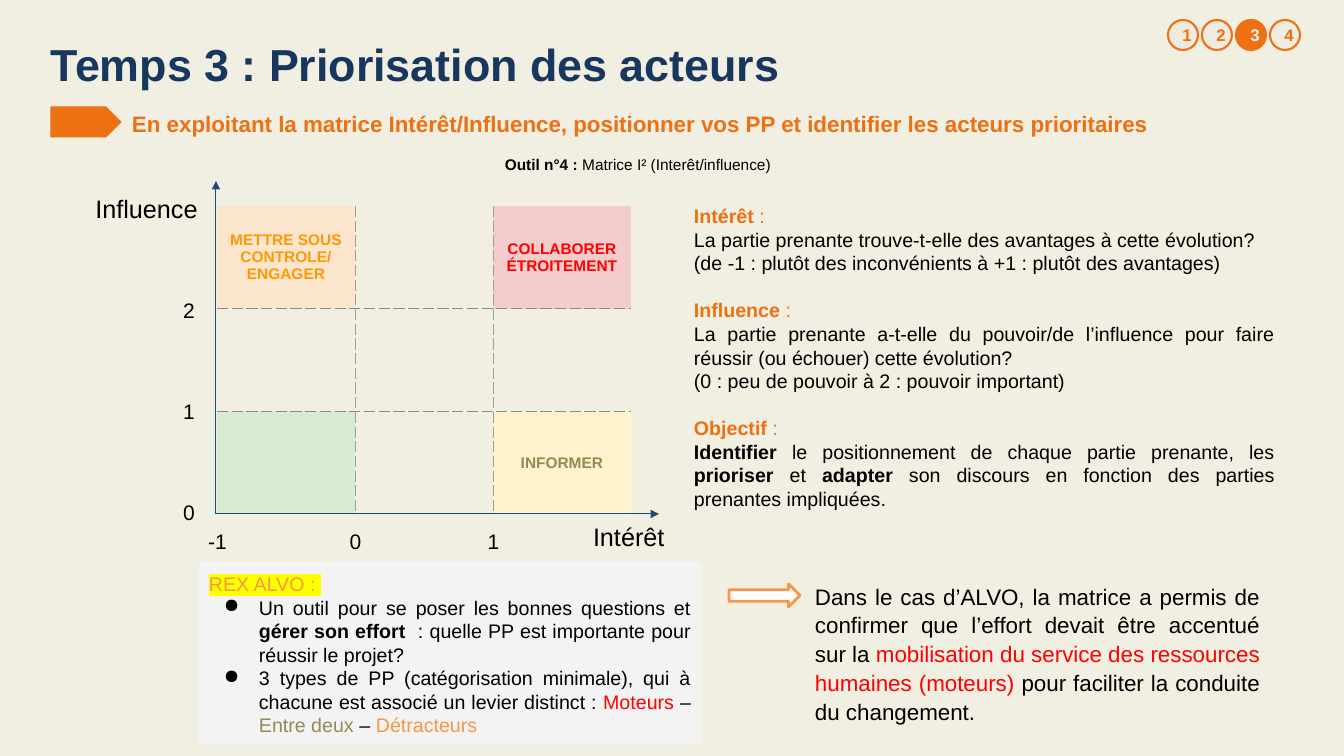
import pptx
import pptx.util
import pptx.dml.color
import pptx.enum.shapes
import pptx.enum.text
import pptx.oxml
import pptx.oxml.ns
from dataclasses import dataclass
from lxml import etree

SHAPE = pptx.enum.shapes.MSO_SHAPE
ALIGN = pptx.enum.text.PP_ALIGN
TOP = pptx.enum.text.MSO_ANCHOR.TOP
MID = pptx.enum.text.MSO_ANCHOR.MIDDLE
PLAIN = "{2D5ABB26-0587-4C30-8999-92F81FD0307C}"


@dataclass(frozen=True)
class Theme:
    font: str = "Arial"
    back: str = "F1EFE1"
    navy: str = "17375E"
    blue: str = "1F497D"
    orange: str = "ED7012"
    peach: str = "F79646"
    amber: str = "FF9900"
    red: str = "FF0000"
    olive: str = "948A54"
    black: str = "000000"
    white: str = "FFFFFF"
    pale: str = "F4F4F4"
    cream: str = "EEECE1"
    panel: str = "F3F3F3"
    yellow: str = "FFFF00"
    title: int = 32
    axis: int = 18
    lead: int = 16
    tick: int = 15
    body: int = 14
    badge: int = 12
    small: int = 11


def px(n):
    return pptx.util.Emu(round(n * 914400 / 100.8))


def rgb(code):
    return pptx.dml.color.RGBColor.from_string(code)


def put(obj, values):
    for name, value in values.items():
        setattr(obj, name, value)


def node(parent, tag, **attrs):
    return etree.SubElement(parent, pptx.oxml.ns.qn(tag), attrs)


class Deck:
    def __init__(self, theme):
        self.theme = theme
        self.show = pptx.Presentation()
        put(self.show, {"slide_width": px(1344), "slide_height": px(756)})
        self.slide = self.show.slides.add_slide(self.show.slide_layouts[5])
        fill = self.slide.background.fill
        fill.solid()
        fill.fore_color.rgb = rgb(theme.back)

    def words(self, frame, paras, size, align=ALIGN.LEFT, anchor=TOP, pad=(10, 10)):
        """Fill a frame; each paragraph is (runs, format values), each run is
        (text, colour, bold, highlight) with the last two optional."""
        x, y = map(px, pad)
        put(frame, {"word_wrap": True, "vertical_anchor": anchor, "margin_left": x,
                    "margin_right": x, "margin_top": y, "margin_bottom": y})
        for i, (runs, form) in enumerate(paras):
            para = frame.paragraphs[0] if i == 0 else frame.add_paragraph()
            form = {"alignment": align, **form}
            self.indent(para, form.pop("indent", 0), form.pop("bullet", None))
            put(para, form)
            for run in runs:
                self.run(para, size, *run)

    def indent(self, para, left, bullet):
        if not left:
            return
        props = para._p.get_or_add_pPr()
        props.set("marL", str(px(left)))
        props.set("indent", str(-px(35) if bullet else 0))
        if bullet:
            tint = node(props, "a:buClr")
            node(tint, "a:srgbClr", val=self.theme.black)
            node(props, "a:buChar", char=bullet)

    def run(self, para, size, text, color, bold=False, mark=None):
        for i, line in enumerate(text.split("\n")):
            if i:
                para.add_line_break()
            run = para.add_run()
            run.text = line
            put(run.font, {"size": pptx.util.Pt(size), "bold": bold})
            run.font.color.rgb = rgb(color)
            if mark:
                glow = node(run.font._element, "a:highlight")
                node(glow, "a:srgbClr", val=mark)
            run.font.name = self.theme.font

    def title(self, box, text):
        shape = self.slide.shapes.title
        put(shape, dict(zip(("left", "top", "width", "height"), map(px, box))))
        runs = [(text, self.theme.navy, True)]
        self.words(shape.text_frame, [(runs, {})], self.theme.title, pad=(0, 0))

    def text(self, box, paras, size, **form):
        shape = self.slide.shapes.add_textbox(*map(px, box))
        self.words(shape.text_frame, paras, size, **form)

    def label(self, box, text, size, align=ALIGN.CENTER, anchor=TOP):
        self.text(box, [([(text, self.theme.black)], {})], size, align=align, anchor=anchor)

    def shape(self, kind, box, fill, line=None, width=1):
        shape = self.slide.shapes.add_shape(kind, *map(px, box))
        shape.shadow.inherit = False
        shape.fill.solid()
        shape.fill.fore_color.rgb = rgb(fill)
        if line:
            shape.line.color.rgb = rgb(line)
            shape.line.width = pptx.util.Pt(width)
        else:
            shape.line.fill.background()
        return shape

    def arrow(self, *ends):
        kind = pptx.enum.shapes.MSO_CONNECTOR.STRAIGHT
        line = self.slide.shapes.add_connector(kind, *map(px, ends))
        line.line.color.rgb = rgb(self.theme.blue)
        line.line.width = pptx.util.Pt(0.75)
        node(line.line._get_or_add_ln(), "a:tailEnd", type="triangle")
        node(line._element.spPr, "a:effectLst")

    def border(self, cell, side, color):
        line = node(cell._tc.get_or_add_tcPr(), "a:" + side, w="9525")
        node(node(line, "a:solidFill"), "a:srgbClr", val=color)
        node(line, "a:prstDash", val="dash")

    def matrix(self, box, cells):
        """Draw a 3 by 3 table; cells maps (row, column) to (fill, text, colour)."""
        table = self.slide.shapes.add_table(3, 3, *map(px, box)).table
        put(table, {"first_row": False, "horz_banding": False})
        table._tbl.tblPr.find(pptx.oxml.ns.qn("a:tableStyleId")).text = PLAIN
        for row in range(3):
            for col in range(3):
                cell = table.cell(row, col)
                sides = {"lnL": col > 0, "lnR": col < 2, "lnT": row > 0, "lnB": row < 2}
                for side, shown in sides.items():
                    if shown:
                        self.border(cell, side, "9E9E9E" if side in ("lnL", "lnR") else "888888")
                if (row, col) not in cells:
                    cell.fill.background()
                    continue
                fill, text, color = cells[row, col]
                cell.fill.solid()
                cell.fill.fore_color.rgb = rgb(fill)
                if text:
                    self.words(cell.text_frame, [([(text, color, True)], {})],
                               self.theme.small, ALIGN.CENTER)
                put(cell, {"vertical_anchor": MID, "margin_left": px(10), "margin_right": px(10)})


def main():
    t = Theme()
    deck = Deck(t)
    just = {"alignment": ALIGN.JUSTIFY}
    loose = {"line_spacing": 1.15}

    deck.title((51, 37, 1210, 54), "Temps 3 : Priorisation des acteurs")
    for step in range(1, 5):
        fill, ink = (t.orange, t.pale) if step == 3 else (t.cream, t.orange)
        badge = deck.shape(SHAPE.OVAL, (1134 + 34 * step, 20, 30, 30), fill, t.orange, 1.5)
        deck.words(badge.text_frame, [([(str(step), ink, True)], {})], t.badge, ALIGN.CENTER, MID)

    lead = "En exploitant la matrice Intérêt/Influence, positionner vos PP et identifier les acteurs prioritaires"
    deck.text((122, 96, 1179, 51), [([(lead, t.orange, True)], loose)], t.lead)
    deck.shape(SHAPE.PENTAGON, (51, 107, 70, 30), t.orange, t.orange, 0.75)
    tool = [("Outil n°4 :", t.black, True), (" Matrice I² (Interêt/influence)", t.black)]
    deck.text((15, 142, 1246, 39), [(tool, loose)], t.small, align=ALIGN.CENTER)

    def head(word, **form):
        return [(word, t.orange, True), (" :", t.orange)], form

    def line(*runs):
        return [(text, t.black, *bold) for text, *bold in runs], just

    gap = pptx.util.Pt(17)
    deck.text((684, 194, 601, 329), [
        head("Intérêt"),
        line(("La partie prenante trouve-t-elle des avantages à cette évolution? ",)),
        line(("(de -1 : plutôt des inconvénients à +1 : plutôt des avantages)",)),
        head("Influence", space_before=gap),
        line(("La partie prenante a-t-elle du pouvoir/de l’influence pour faire réussir (ou échouer) cette évolution? ",)),
        line(("(0 : peu de pouvoir à 2 : pouvoir important)",)),
        head("Objectif", space_before=gap),
        line(("Identifier", True), (" le positionnement de chaque partie prenante, les ",),
             ("prioriser", True), (" et ",), ("adapter", True),
             (" son discours en fonction des parties prenantes impliquées.",)),
    ], t.body)

    deck.matrix((217, 206, 414, 308), {
        (0, 0): ("FCE5CD", "METTRE SOUS CONTROLE/\nENGAGER", t.amber),
        (0, 2): ("F4CCCC", "COLLABORER ÉTROITEMENT", t.red),
        (2, 0): ("D9EAD3", "", t.black),
        (2, 2): ("FFF2CC", "INFORMER", t.olive),
    })
    deck.arrow(216, 514, 216, 181)
    deck.arrow(216, 514, 659, 514)
    deck.label((75, 183, 143, 50), "Influence", t.axis)
    deck.label((583, 511, 143, 50), "Intérêt", t.axis, ALIGN.LEFT)
    for i in range(3):
        deck.label((154, 497 - 101 * i, 70, 30), str(i), t.tick, anchor=MID)
        deck.label((164 + 138 * i, 519, 107, 42), str(i - 1), t.tick)

    point = {**just, "indent": 50, "bullet": "●"}
    panel = deck.shape(SHAPE.RECTANGLE, (199, 562, 502, 182), t.panel)
    deck.words(panel.text_frame, [
        ([("REX ALVO : ", t.peach, False, t.yellow)], {}),
        ([("Un outil pour se poser les bonnes questions et ", t.black),
          ("gérer son effort  ", t.black, True),
          (": quelle PP est importante pour réussir le projet?", t.black)], point),
        ([("3 types de PP (catégorisation minimale), qui à chacune est associé un levier distinct : ", t.black),
          ("Moteurs", t.red), (" – ", t.black), ("Entre deux ", t.olive),
          ("– ", t.black), ("Détracteurs", t.peach)], point),
    ], t.body, anchor=TOP)

    case = [("Dans le cas d’ALVO, la matrice a permis de confirmer que l’effort devait être accentué sur la ", t.black),
            ("mobilisation du service des ressources humaines (moteurs)", t.red),
            (" pour faciliter la conduite du changement.", t.black)]
    form = {**just, "indent": 76, "line_spacing": 1.07, "space_after": pptx.util.Pt(8)}
    deck.text((729, 576, 541, 153), [(case, form)], t.lead, pad=(10, 5))
    deck.shape(SHAPE.RIGHT_ARROW, (729, 584, 71, 23), t.white, t.peach, 2)

    deck.show.save("out.pptx")


if __name__ == "__main__":
    main()
